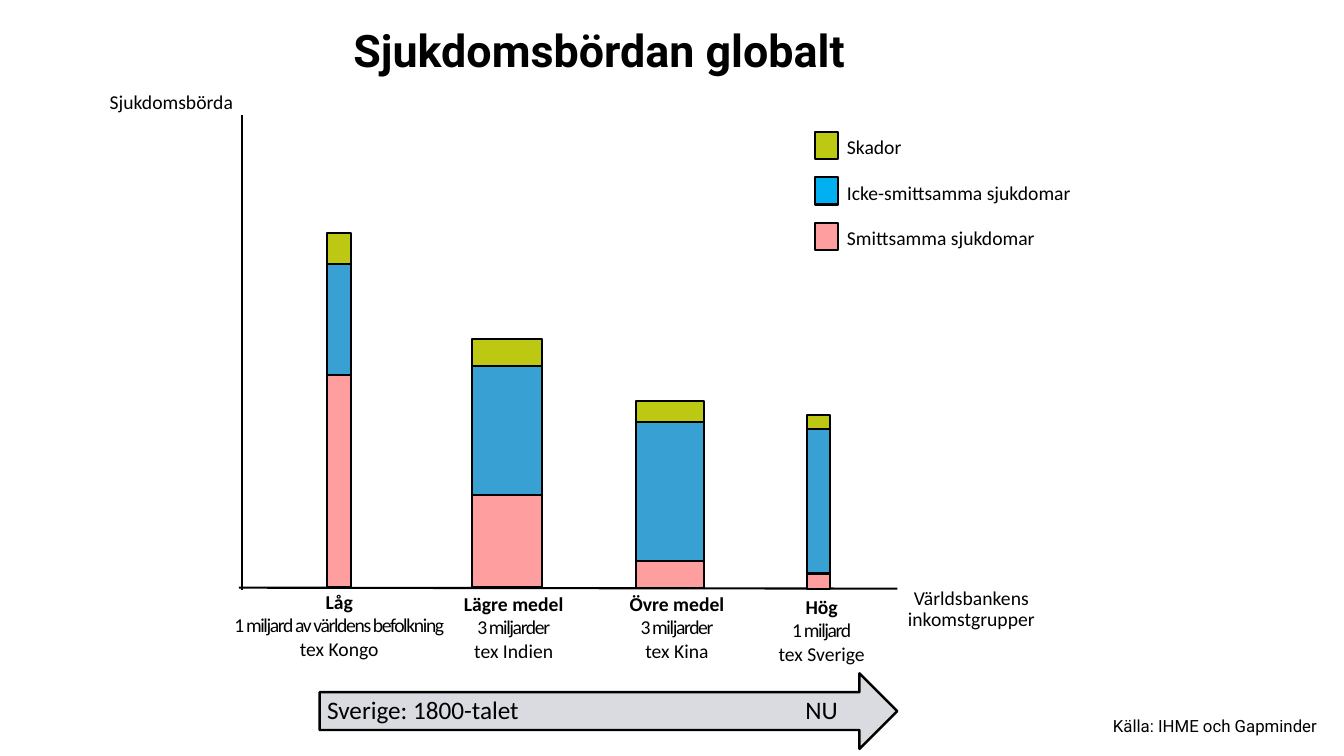
from lxml import etree
from pptx import Presentation
from pptx import util as u
from pptx.dml.color import RGBColor
from pptx.enum import shapes, text
from pptx.oxml.ns import qn

COLOURS = {
    "black": "000000",
    "injuries": "BCC811",
    "noncommunicable": "39A0D3",
    "noncommunicable_key": "00B0F0",
    "communicable": "FF9E9E",
    "arrow": "D9DBE0",
}
STACK = ("injuries", "noncommunicable", "communicable")
CENTER, LEFT = text.PP_ALIGN.CENTER, text.PP_ALIGN.LEFT

# Bar left, bar width, edges of the stacked parts from top to bottom,
# label left, top and width, label lines
INCOME_GROUPS = [
    (3.24, 0.24, (2.31, 2.62, 3.72, 5.82), (2.08, 5.82, 2.57),
     ("Låg", "1 miljard av världens befolkning", "tex Kongo")),
    (4.68, 0.70, (3.36, 3.63, 4.91, 5.82), (4.25, 5.84, 1.69),
     ("Lägre medel", "3 miljarder", "tex Indien")),
    (6.31, 0.67, (3.98, 4.19, 5.57, 5.83), (5.75, 5.84, 1.93),
     ("Övre medel", "3 miljarder", "tex Kina")),
    (8.00, 0.23, (4.12, 4.26, 5.69, 5.84), (7.36, 5.87, 1.58),
     ("Hög", "1 miljard", "tex Sverige")),
]
LEGEND = [
    ("injuries", "Skador"),
    ("noncommunicable_key", "Icke-smittsamma sjukdomar"),
    ("communicable", "Smittsamma sjukdomar"),
]


def colour(name):
    return RGBColor.from_string(COLOURS[name])


def add_block(slide, kind, left, top, width, height, fill, line_width=1.5):
    shape = slide.shapes.add_shape(kind, u.Inches(left), u.Inches(top),
                                   u.Inches(width), u.Inches(height))
    shape.shadow.inherit = False
    shape.fill.solid()
    shape.fill.fore_color.rgb = colour(fill)
    shape.line.color.rgb = colour("black")
    shape.line.width = u.Pt(line_width)


def add_axis(slide, start, end):
    line = slide.shapes.add_connector(shapes.MSO_CONNECTOR.STRAIGHT,
                                      *map(u.Inches, start + end))
    line.line.color.rgb = colour("black")
    line.line.width = u.Pt(1.5)
    etree.SubElement(line._element.spPr, qn("a:effectLst"))


def add_text(slide, box, lines, size=14, font="Calibri", align=CENTER, bold=False,
             spacing=None, insets=(0.07, 0.04), wrap=True,
             anchor=text.MSO_ANCHOR.TOP):
    """Add a text box with one paragraph a line and return its runs."""
    frame = slide.shapes.add_textbox(*map(u.Inches, box)).text_frame
    frame.word_wrap = wrap
    frame.vertical_anchor = anchor
    frame.margin_left = frame.margin_right = u.Inches(insets[0])
    frame.margin_top = frame.margin_bottom = u.Inches(insets[1])
    runs = []
    for index, line in enumerate(lines):
        paragraph = frame.add_paragraph() if index else frame.paragraphs[0]
        paragraph.alignment = align
        if spacing:
            paragraph.line_spacing = spacing
        run = paragraph.add_run()
        run.text = line
        run.font.name = font
        run.font.size = u.Pt(size)
        run.font.bold = bold
        run.font.color.rgb = colour("black")
        runs.append(run)
    return runs


def add_income_group(slide, left, width, edges, label, lines):
    for name, top, bottom in zip(STACK, edges, edges[1:]):
        add_block(slide, shapes.MSO_SHAPE.RECTANGLE, left, top, width,
                  bottom - top, name)
    heading, population, _ = add_text(slide, label + (1.03,), lines,
                                      spacing=u.Pt(16.5))
    heading.font.bold = True
    population.font._element.set("spc", "-100")  # tighter letters


def add_legend(slide):
    for row, (name, label) in enumerate(LEGEND):
        top = 1.31 + 0.45 * row
        add_block(slide, shapes.MSO_SHAPE.RECTANGLE, 8.08, top, 0.23, 0.27, name)
        add_text(slide, (8.33, top - 0.01, 2.6, 0.31), [label], align=LEFT)


def add_timeline(slide):
    add_block(slide, shapes.MSO_SHAPE.RIGHT_ARROW, 3.17, 6.68, 5.73, 0.75,
              "arrow", 1.75)
    for left, width, label in ((2.72, 2.95, "Sverige: 1800-talet"),
                               (7.4, 1.5, "NU")):
        add_text(slide, (left, 6.86, width, 0.4), [label], size=18, spacing=0.9,
                 insets=(0, 0), anchor=text.MSO_ANCHOR.MIDDLE)


def main():
    presentation = Presentation()
    presentation.slide_width = u.Inches(13.33)
    presentation.slide_height = u.Inches(7.5)
    slide = presentation.slides.add_slide(presentation.slide_layouts[6])

    # Title and source
    add_text(slide, (0.77, 0.24, 10.35, 1.38), ["Sjukdomsbördan globalt"], size=32,
             font="Roboto", bold=True, spacing=0.9, insets=(0.1, 0.05))
    add_text(slide, (10.94, 7.05, 2.24, 0.3), ["Källa: IHME och Gapminder"], size=12,
             font="Roboto", align=LEFT, insets=(0.1, 0.05), wrap=False)

    # Axes and their names
    add_axis(slide, (2.4, 1.14), (2.4, 5.85))
    add_axis(slide, (2.37, 5.83), (8.9, 5.84))
    add_text(slide, (0.67, 0.84, 2.06, 0.34), ["Sjukdomsbörda"], insets=(0.1, 0.05))
    add_text(slide, (7.82, 5.8, 3.63, 0.5), ["Världsbankens", "inkomstgrupper"],
             spacing=u.Pt(15))

    # Stacked bars, legend and time arrow
    for group in INCOME_GROUPS:
        add_income_group(slide, *group)
    add_legend(slide)
    add_timeline(slide)

    presentation.save("out.pptx")


if __name__ == "__main__":
    main()
